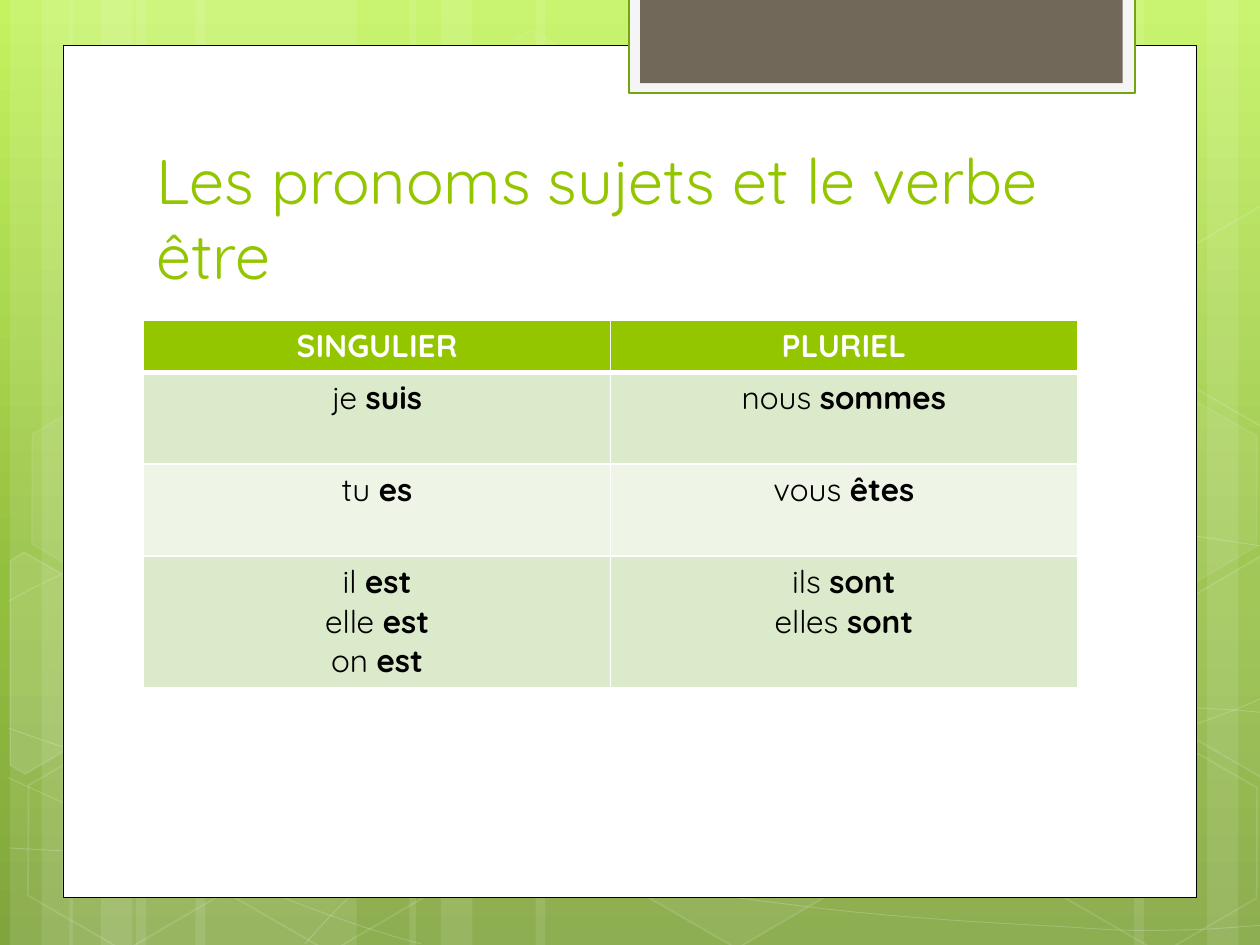
from copy import deepcopy
from math import cos, radians, sin

from lxml.etree import SubElement
from pptx import Presentation
from pptx.dml.color import RGBColor
from pptx.enum.shapes import MSO_SHAPE
from pptx.enum.text import MSO_ANCHOR, MSO_AUTO_SIZE, PP_ALIGN
from pptx.oxml.ns import qn
from pptx.util import Cm, Pt

INCH = 2.54
FONT = "Quicksand"
COLORS = {
    "top": "C3F35F", "mid": "93BF3F", "low": "81A53E", "white": "FFFFFF",
    "black": "000000", "lime": "94C600", "tab": "F5F5F5", "edge": "74A510",
    "brown": "71685A", "odd": "DCEACC", "even": "EEF5E7",
}
STRIPES = [
    (1.08, 1.75), (0.08, 0.5), (0.33, 0.83), (1.55, 1.75), (0.55, 0.5), (0.8, 0.83),
    (7.33, 1.75), (9.58, 0.5), (9, 0.83), (4.25, 3.08), (3.25, 0.5), (3.5, 0.83),
]
CURVES = [
    [(0.07, 6.73), (0.61, 6.76), (1.15, 6.79), (1.9, 6.78), (2.65, 6.77), (3.58, 6.75),
     (4.58, 6.65), (5.58, 6.55), (7, 6.36), (7.92, 6.17), (8.83, 5.98), (9.77, 5.68),
     (10.07, 5.51)],
    [(0.07, 4.77), (0.36, 4.61), (0.65, 4.46), (1.21, 4.31), (1.78, 4.16), (2.59, 3.94),
     (3.47, 3.87), (4.36, 3.8), (5.44, 3.79), (6.54, 3.87), (7.64, 3.95), (9.47, 4.26),
     (10.07, 4.34)],
    [(0.06, 6.17), (1.27, 6.72), (2.47, 7.27), (3.34, 7.49)],
    [(0.07, 5.78), (0.38, 5.89), (0.7, 6), (1.28, 6.16), (1.86, 6.31), (2.73, 6.56),
     (3.57, 6.73), (4.4, 6.9), (5.45, 7.08), (6.28, 7.18), (7.11, 7.29), (8, 7.33),
     (8.53, 7.36), (9.05, 7.4), (9.19, 7.38), (9.45, 7.38), (9.71, 7.37), (9.89, 7.35),
     (10.07, 7.34)],
    [(2.42, 7.49), (2.6, 7.29), (2.78, 7.09), (3.02, 6.91), (3.26, 6.73), (3.6, 6.53),
     (3.88, 6.39), (4.16, 6.25), (4.33, 6.19), (4.7, 6.09), (5.06, 5.99), (5.73, 5.85),
     (6.08, 5.78), (6.44, 5.71), (6.49, 5.71), (6.8, 5.69), (7.11, 5.66), (7.6, 5.63),
     (7.94, 5.62), (8.29, 5.61), (8.86, 5.62), (8.86, 5.62), (8.86, 5.62), (9.53, 5.62),
     (9.53, 5.62), (9.71, 5.63), (9.88, 5.64), (9.97, 5.65), (10.06, 5.66), (10.03, 5.65),
     (10.06, 5.66)],
]
HEXES = [
    (3.34, 0.36, 4, 8), (4.97, 5.89, 6, 12), (0.11, 5.91, 0, 12), (0.14, 3.12, 7, 8),
    (1.74, 5.92, 0, 12), (7.53, 4.53, 10, 12), (8.34, 5.93, 0, 12), (8.34, 3.14, 7, 8),
]
RIGHT = [(9.26, 4.85), (10.01, 4.41), (10.09, 4.46), (10.09, 6.13), (10.02, 6.17), (9.26, 5.73)]
PARTS = [
    ([(0.08, 4.45), (0.19, 4.38), (0.96, 4.82), (0.95, 5.7), (0.2, 6.14), (0.08, 6.07)],
     (0.36, 5.35), 10),
    (RIGHT, (9.85, 5.2), 4),
    ([(x, y - 2.78) for x, y in RIGHT], (9.85, 2.41), 0),
]
ROWS = [
    (0.41, [[("SINGULIER", True)]], [[("PLURIEL", True)]]),
    (0.73, [[("je ", False), ("suis", True)]], [[("nous ", False), ("sommes", True)]]),
    (0.73, [[("tu ", False), ("es", True)]], [[("vous ", False), ("êtes", True)]]),
    (1.03, [[(who, False), ("est", True)] for who in ("il ", "elle ", "on ")],
     [[(who, False), ("sont", True)] for who in ("ils ", "elles ")]),
]


def cm(*vals):
    return [Cm(val * INCH) for val in vals]


def tint(fill, name):
    fill.solid()
    fill.fore_color.rgb = RGBColor.from_string(COLORS[name])


def fade(holder, alpha):
    if alpha < 100:
        tone = holder.find(qn("a:solidFill")).find(qn("a:srgbClr"))
        SubElement(tone, qn("a:alpha")).set("val", str(alpha * 1000))


def paint(shape, fill=None, alpha=100, line=None, width=1, clear=100):
    shape.shadow.inherit = False
    props = shape.element.spPr
    if fill and alpha:
        tint(shape.fill, fill)
        fade(props, alpha)
    else:
        shape.fill.background()
    if line:
        tint(shape.line.fill, line)
        shape.line.width = Pt(width)
        fade(props.find(qn("a:ln")), clear)
    else:
        shape.line.fill.background()


def block(slide, box, kind=MSO_SHAPE.RECTANGLE, **look):
    shape = slide.shapes.add_shape(kind, *cm(*box))
    paint(shape, **look)
    return shape


def trace(slide, left, top, points, close, **look):
    spots = [cm(left + x, top + y) for x, y in points]
    pen = slide.shapes.build_freeform(*spots[0])
    pen.add_line_segments(spots[1:], close=close)
    shape = pen.convert_to_shape()
    paint(shape, **look)
    return shape


def bend(shape):
    route = next(shape.element.iter(qn("a:path")))
    legs = route.findall(qn("a:lnTo"))
    for i in range(0, len(legs), 3):
        curve = SubElement(route, qn("a:cubicBezTo"))
        for leg in legs[i:i + 3]:
            curve.append(deepcopy(leg[0]))
            route.remove(leg)


def turn(points, mid, angle):
    c, s = cos(radians(angle)), sin(radians(angle))
    a, b = mid
    return [(a + (x - a) * c - (y - b) * s, b + (x - a) * s + (y - b) * c) for x, y in points]


def add_ground(slide):
    fill = slide.background.fill
    fill.gradient()
    fill.gradient_angle = 270
    stops = next(slide.element.iter(qn("a:gsLst")))
    for stop in list(stops):
        stops.remove(stop)
    for name, pos in (("top", 0), ("mid", 62), ("low", 100)):
        stop = SubElement(stops, qn("a:gs"), pos=str(pos * 1000))
        SubElement(stop, qn("a:srgbClr"), val=COLORS[name])


def add_decor(slide, box):
    left, top, _, high = box
    for x, wide in STRIPES:
        block(slide, (left + x, top, wide, high), fill="white", alpha=10)
    for points in CURVES:
        bend(trace(slide, left, top, points, False, line="white", width=0.5, clear=20))
    for x, y, alpha, clear in HEXES:
        shape = block(slide, (left + x, top + y, 1.75, 1.52), MSO_SHAPE.HEXAGON,
                      fill="white", alpha=alpha, line="white", clear=clear)
        shape.adjustments[0] = 0.285
        shape.rotation = 30
    for points, mid, alpha in PARTS:
        shape = trace(slide, left, top, turn(points, mid, -30), True,
                      fill="white", alpha=alpha, line="white", clear=12)
        shape.rotation = 30


def add_panel(slide, box):
    left, top, _, _ = box
    block(slide, box, fill="white", line="black", width=0.5)
    block(slide, (left + 4.49, top - 0.38, 4.02, 0.76), fill="tab", line="edge", width=1.25)
    block(slide, (left + 4.58, top - 0.38, 3.83, 0.68), fill="brown")


def add_run(para, text, size, color, bold=False):
    run = para.add_run()
    run.text = text
    font = run.font
    font.name, font.size, font.bold = FONT, Pt(size), bold
    tint(font.fill, color)


def add_title(slide, box):
    title = slide.shapes.title
    title.left, title.top, title.width, title.height = cm(*box)
    slide.shapes.element.append(title.element)
    frame = title.text_frame
    frame.word_wrap = True
    frame.auto_size = MSO_AUTO_SIZE.NONE
    frame.vertical_anchor = MSO_ANCHOR.BOTTOM
    para = frame.paragraphs[0]
    para.alignment = PP_ALIGN.LEFT
    add_run(para, "Les pronoms sujets et le verbe être", 36, "lime")


def add_edges(cell):
    props = cell._tc.get_or_add_tcPr()
    for i, (side, width) in enumerate((("L", 1), ("R", 1), ("T", 1), ("B", 3))):
        edge = SubElement(props, qn(f"a:ln{side}"), w=str(Pt(width)))
        SubElement(SubElement(edge, qn("a:solidFill")), qn("a:srgbClr"), val=COLORS["white"])
        props.insert(i, edge)


def add_verbs(slide, box):
    table = slide.shapes.add_table(len(ROWS), 2, *cm(*box)).table
    for i, (high, *cells) in enumerate(ROWS):
        table.rows[i].height = Cm(high * INCH)
        for j, lines in enumerate(cells):
            cell = table.cell(i, j)
            tint(cell.fill, ("even", "odd")[i % 2] if i else "lime")
            if i == 0:
                add_edges(cell)
            for k, runs in enumerate(lines):
                frame = cell.text_frame
                para = frame.add_paragraph() if k else frame.paragraphs[0]
                para.alignment = PP_ALIGN.CENTER
                for text, bold in runs:
                    add_run(para, text, 18, "black" if i else "white", bold)


def main():
    deck = Presentation()
    deck.slide_width, deck.slide_height = cm(10, 7.5)
    slide = deck.slides.add_slide(deck.slide_layouts[5])
    add_ground(slide)
    add_decor(slide, (0, 0, 10, 7.5))
    add_panel(slide, (0.5, 0.36, 9, 6.76))
    add_title(slide, (1.14, 1.12, 7.68, 1.25))
    add_verbs(slide, (1.14, 2.54, 7.41, 2.9))
    deck.save("out.pptx")


if __name__ == "__main__":
    main()
